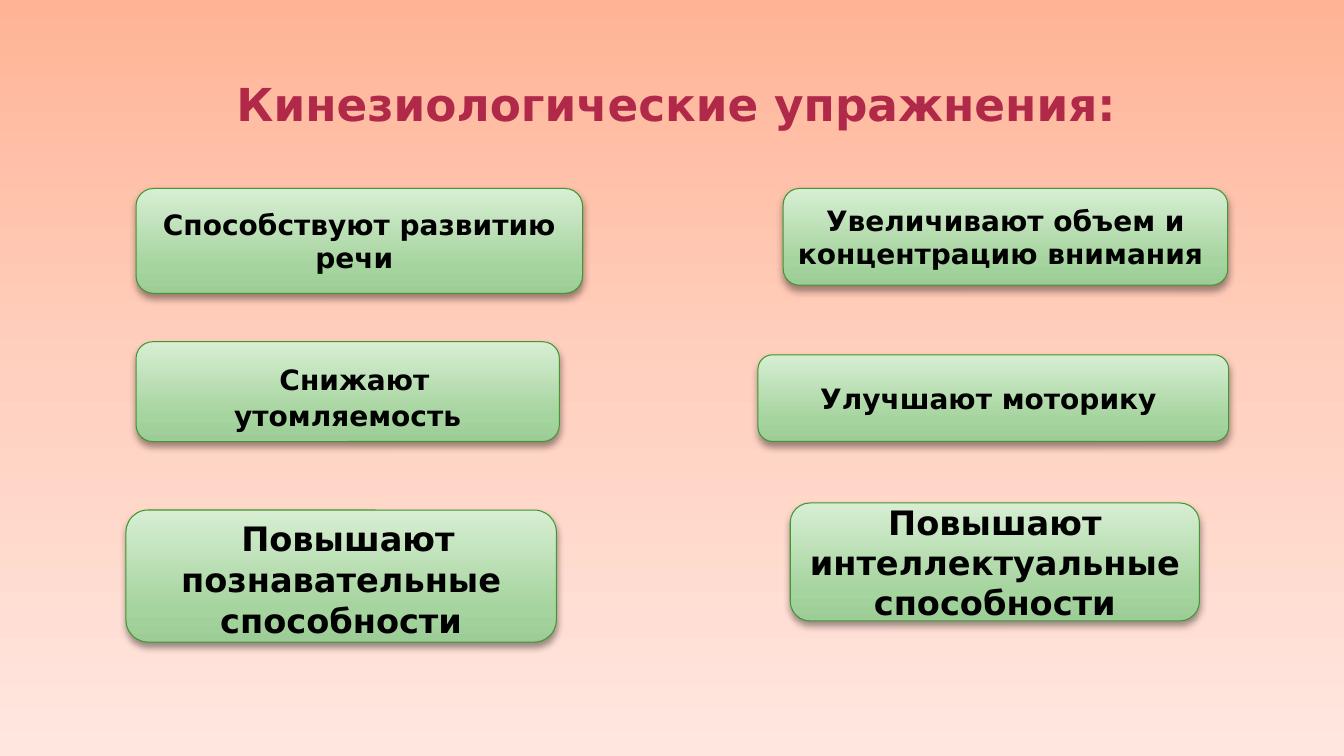
from lxml import etree
from pptx import Presentation
from pptx import util as u
from pptx.dml.color import RGBColor
from pptx.enum import shapes, text
from pptx.oxml import ns

FONT = "DejaVu Sans"
CRIMSON = RGBColor(0xB1, 0x29, 0x49)
BLACK = RGBColor(0, 0, 0)
GREEN_LINE = RGBColor(0x43, 0x96, 0x31)
GREEN_STOPS = [
    (0, RGBColor(0x9D, 0xCD, 0x96)),
    (25, RGBColor(0xA5, 0xD4, 0x9E)),
    (100, RGBColor(0xD7, 0xEE, 0xD3)),
]
PEACH_STOPS = [
    (0, RGBColor(0xFF, 0xB4, 0x96)),
    (50, RGBColor(0xFF, 0xD0, 0xBF)),
    (100, RGBColor(0xFF, 0xE7, 0xE0)),
]
BENEFITS = [
    (97.2, 134.64, 318.96, 74.88, [("Способствуют развитию речи ", 20)]),
    (559.44, 134.64, 317.52, 69.12, [("Увеличивают объем и концентрацию внимания ", 20)]),
    (97.2, 244.08, 302.4, 71.28, [(" ", 28), ("Снижают утомляемость", 20)]),
    (541.44, 253.44, 336.24, 61.92, [("Улучшают моторику ", 20)]),
    (564.48, 359.28, 292.32, 84.24, [("Повышают интеллектуальные способности", 24)]),
    (90, 364.32, 307.44, 94.32, [(" ", 28), ("Повышают познавательные способности", 24)]),
]


def add_node(parent, tag, **attributes):
    return etree.SubElement(parent, ns.qn(tag), attributes)


def set_gradient(fill, owner, stops, angle):
    fill.gradient()
    fill.gradient_angle = angle
    stop_list = next(owner.iter(ns.qn("a:gsLst")))
    for stop in list(stop_list):
        stop_list.remove(stop)
    for percent, color in stops:
        stop = add_node(stop_list, "a:gs", pos=str(percent * 1000))
        add_node(stop, "a:srgbClr", val=str(color))


deck = Presentation()
deck.slide_width = u.Pt(960)
deck.slide_height = u.Pt(540)
page = deck.slides.add_slide(deck.slide_layouts[6])
set_gradient(page.background.fill, page.element, PEACH_STOPS, 270)

title = page.shapes.add_textbox(u.Pt(51.12), u.Pt(44.64), u.Pt(864), u.Pt(90))
title.text_frame.word_wrap = True
title.text_frame.vertical_anchor = text.MSO_ANCHOR.BOTTOM
title.text_frame.margin_bottom = u.Pt(41.3)
para = title.text_frame.paragraphs[0]
para.text = "Кинезиологические упражнения:"
para.alignment = text.PP_ALIGN.CENTER
para.font.name = FONT
para.font.size = u.Pt(32.4)
para.font.bold = True
para.font.color.rgb = CRIMSON

for left, top, width, height, spans in BENEFITS:
    box = page.shapes.add_shape(
        shapes.MSO_SHAPE.ROUNDED_RECTANGLE,
        u.Pt(left), u.Pt(top), u.Pt(width), u.Pt(height),
    )
    set_gradient(box.fill, box.element, GREEN_STOPS, 90)
    box.line.color.rgb = GREEN_LINE
    box.line.width = u.Pt(0.75)
    box.shadow.inherit = False
    effects = next(box.element.iter(ns.qn("a:effectLst")))
    shadow = add_node(
        effects, "a:outerShdw", blurRad=str(u.Pt(5.2)), dist=str(u.Pt(3)),
        dir="5400000", rotWithShape="0",
    )
    shade = add_node(shadow, "a:srgbClr", val=str(BLACK))
    add_node(shade, "a:alpha", val="40000")

    box.text_frame.word_wrap = True
    box.text_frame.vertical_anchor = text.MSO_ANCHOR.MIDDLE
    para = box.text_frame.paragraphs[0]
    para.alignment = text.PP_ALIGN.CENTER
    for wording, size in spans:
        span = para.add_run()
        span.text = wording
        span.font.name = FONT
        span.font.size = u.Pt(size)
        span.font.bold = True
        span.font.color.rgb = BLACK

deck.save("out.pptx")
